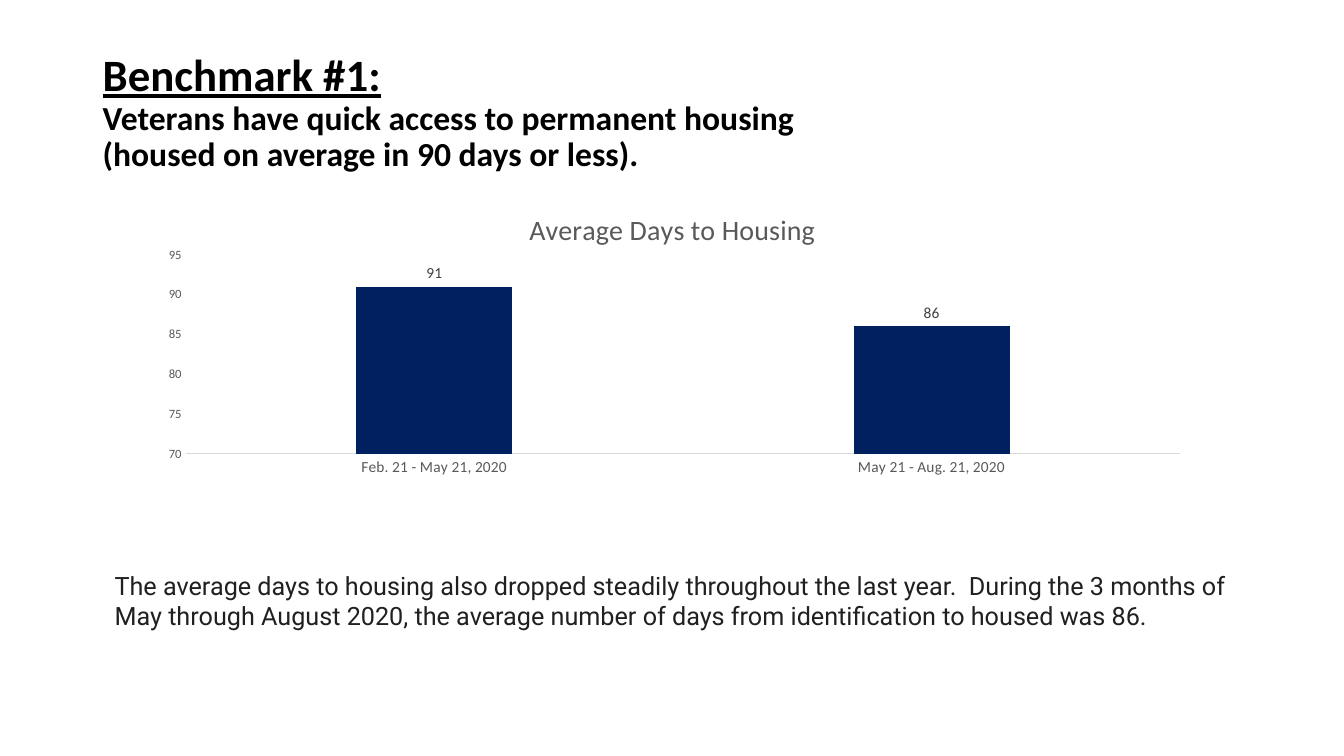
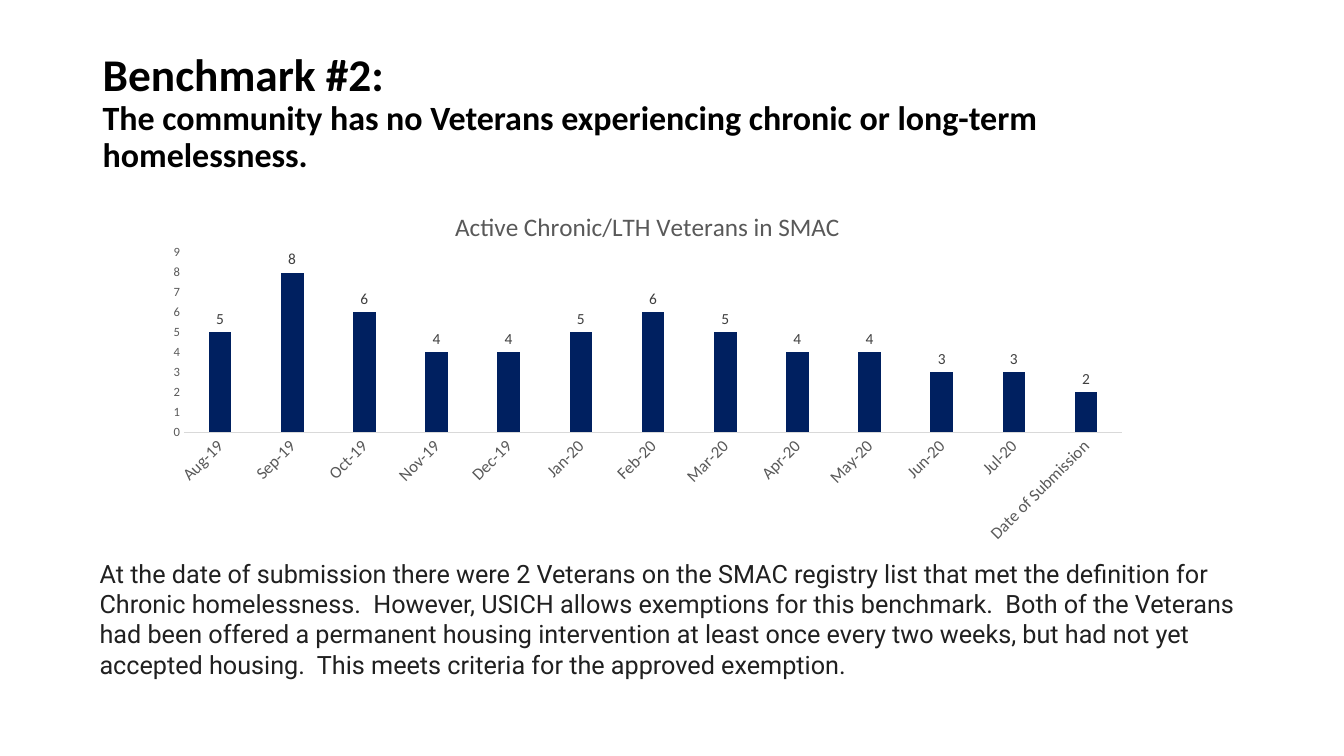
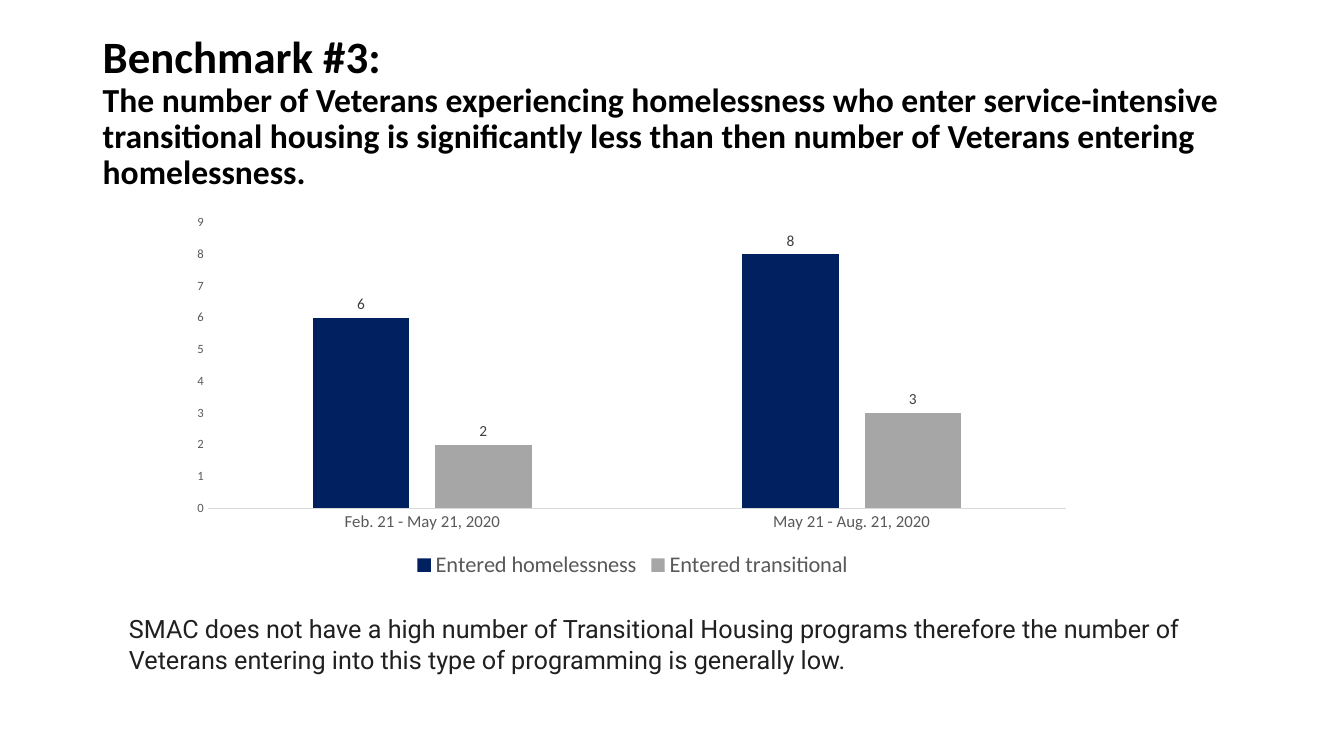
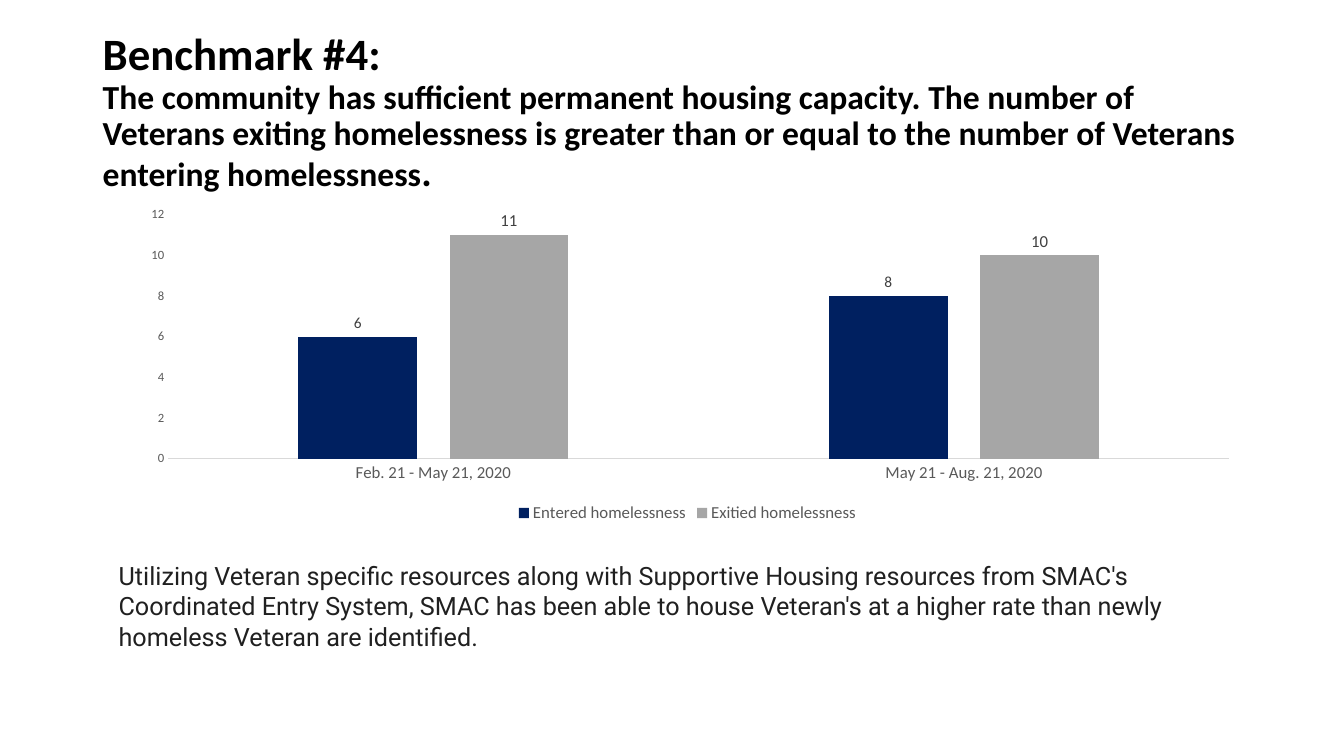
from lxml.etree import SubElement
from pptx import Presentation
from pptx.chart.data import CategoryChartData
from pptx.dml.color import RGBColor
from pptx.enum.chart import (XL_CHART_TYPE, XL_LABEL_POSITION,
                             XL_LEGEND_POSITION, XL_TICK_MARK)
from pptx.enum.text import MSO_ANCHOR
from pptx.oxml.ns import qn
from pptx.util import Cm, Pt

COLORS = {
    "title": "000000",
    "body": "202020",
    "navy": "002060",
    "gray": "A6A6A6",
    "axis_text": "595959",
    "axis_line": "D9D9D9",
    "label": "404040",
}
HEAD_FONT = "Calibri"
BODY_FONT = "Roboto"
TITLE_BOX = (2.34, 1.02, 29.21, 3.68)
QUARTERS = ["Feb. 21 - May 21, 2020", "May 21 - Aug. 21, 2020"]
MONTHS = ["Aug-19", "Sep-19", "Oct-19", "Nov-19", "Dec-19", "Jan-20", "Feb-20",
          "Mar-20", "Apr-20", "May-20", "Jun-20", "Jul-20", "Date of Submission"]


def color(name):
    return RGBColor.from_string(COLORS[name])


def style_font(font, size, color_name, name=HEAD_FONT, bold=False):
    font.size = Pt(size)
    font.name = name
    font.bold = bold
    font.color.rgb = color(color_name)


def add_text_box(slide, box):
    frame = slide.shapes.add_textbox(*map(Cm, box)).text_frame
    frame.word_wrap = True
    return frame


def add_title(slide, heading, lines, sizes=(32, 24), underline=None):
    """Heading above a statement; returns the paragraph."""
    frame = add_text_box(slide, TITLE_BOX)
    frame.vertical_anchor = MSO_ANCHOR.MIDDLE
    paragraph = frame.paragraphs[0]
    paragraph.line_spacing = 0.9
    style_font(paragraph.font, sizes[1], "title", bold=True)
    run = paragraph.add_run()
    run.text = heading
    run.font.size = Pt(sizes[0])
    run.font.underline = underline
    for line in lines:
        paragraph.add_line_break()
        paragraph.add_run().text = line
    return paragraph


def add_body(slide, text, box):
    paragraph = add_text_box(slide, box).paragraphs[0]
    paragraph.text = text
    style_font(paragraph.font, 18, "body", BODY_FONT)


def set_layout(parent, index, **fractions):
    """Place a chart part by fractions of the chart area."""
    old_layout = parent.find(qn("c:layout"))
    if old_layout is not None:
        parent.remove(old_layout)
    layout = SubElement(parent, qn("c:layout"))
    parent.insert(index, layout)
    manual = SubElement(layout, qn("c:manualLayout"))
    if "w" in fractions:
        SubElement(manual, qn("c:layoutTarget")).set("val", "inner")
    for mode in ("xMode", "yMode"):
        SubElement(manual, qn(f"c:{mode}")).set("val", "edge")
    for key, value in fractions.items():
        SubElement(manual, qn(f"c:{key}")).set("val", str(value))


def style_axis(axis, size):
    axis.has_major_gridlines = False
    axis.major_tick_mark = axis.minor_tick_mark = XL_TICK_MARK.NONE
    style_font(axis.tick_labels.font, size, "axis_text")


def add_column_chart(slide, box, categories, series_values, plot_area,
                     category_size=12, label_sizes=(11, 11)):
    data = CategoryChartData()
    data.categories = categories
    for name, values in series_values:
        data.add_series(name, values)
    chart = slide.shapes.add_chart(
        XL_CHART_TYPE.COLUMN_CLUSTERED, *map(Cm, box), data).chart
    style_font(chart.font, 10, "title")
    chart.has_title = False
    chart.has_legend = False

    # Axes
    style_axis(chart.category_axis, category_size)
    axis_line = chart.category_axis.format.line
    axis_line.color.rgb = color("axis_line")
    axis_line.width = Pt(0.75)
    style_axis(chart.value_axis, 9)
    chart.value_axis.format.line.fill.background()

    # Columns and their values
    plot = chart.plots[0]
    plot.vary_by_categories = False
    plot.gap_width = 219
    plot.overlap = -27
    for series, fill, size in zip(plot.series, ("navy", "gray"), label_sizes):
        series.format.fill.solid()
        series.format.fill.fore_color.rgb = color(fill)
        labels = series.data_labels
        labels.show_value = True
        labels.position = XL_LABEL_POSITION.OUTSIDE_END
        style_font(labels.font, size, "label")

    set_layout(chart.element.find(".//" + qn("c:plotArea")), 0,
               **dict(zip("xywh", plot_area)))
    return chart


def add_chart_title(chart, text, size, x, y):
    chart.has_title = True
    paragraph = chart.chart_title.text_frame.paragraphs[0]
    paragraph.text = text
    style_font(paragraph.font, size, "axis_text")
    chart.chart_title.include_in_layout = False
    set_layout(chart.element.find(".//" + qn("c:title")), 1, x=x, y=y)


def add_legend(chart, size):
    chart.has_legend = True
    chart.legend.position = XL_LEGEND_POSITION.BOTTOM
    chart.legend.include_in_layout = False
    style_font(chart.legend.font, size, "axis_text")


def slant_categories(chart):
    body = chart.element.find(f".//{qn('c:catAx')}/{qn('c:txPr')}/{qn('a:bodyPr')}")
    body.set("rot", "-2700000")
    body.set("vert", "horz")


def build_quick_access(slide):
    add_title(slide, "Benchmark #1:",
              ["Veterans have quick access to permanent housing",
               "(housed on average in 90 days or less)."], underline=True)
    chart = add_column_chart(slide, (3.61, 4.7, 26.67, 7.49), QUARTERS,
                             [("Series 1", (91, 86))],
                             (0.04, 0.23, 0.94, 0.67), category_size=11)
    chart.value_axis.minimum_scale = 70
    add_chart_title(chart, "Average Days to Housing", 20, 0.36, 0.06)
    add_body(slide, "The average days to housing also dropped steadily throughout the "
             "last year.  During the 3 months of May through August 2020, the average "
             "number of days from identification to housed was 86.",
             (2.64, 14.25, 29.21, 1.8))


def build_chronic(slide):
    add_title(slide, "Benchmark #2:",
              ["The community has no Veterans experiencing chronic or long-term "
               "homelessness."], sizes=(32.4, 24.3))
    chart = add_column_chart(slide, (3.89, 4.7, 24.89, 9.25), MONTHS,
                             [("Series 1", (5, 8, 6, 4, 4, 5, 6, 5, 4, 4, 3, 3, 2))],
                             (0.03, 0.18, 0.95, 0.49))
    slant_categories(chart)
    add_chart_title(chart, "Active Chronic/LTH Veterans in SMAC", 18, 0.3, 0.05)
    add_body(slide, "At the date of submission there were 2 Veterans on the SMAC registry "
             "list that met the definition for Chronic homelessness.  However, USICH "
             "allows exemptions for this benchmark.  Both of the Veterans had been "
             "offered a permanent housing intervention at least once every two weeks, "
             "but had not yet accepted housing.  This meets criteria for the approved "
             "exemption.", (2.26, 13.94, 29.62, 3.45))


def build_transitional(slide):
    add_title(slide, "Benchmark #3:",
              ["The number of Veterans experiencing homelessness who enter "
               "service-intensive transitional housing is significantly less than then "
               "number of Veterans entering homelessness."])
    chart = add_column_chart(slide, (4.55, 5.23, 22.78, 9.47), QUARTERS,
                             [("Entered homelessness", (6, 8)),
                              ("Entered transitional", (2, 3))],
                             (0.03, 0.04, 0.95, 0.76))
    add_legend(chart, 16)
    add_body(slide, "SMAC does not have a high number of Transitional Housing programs "
             "therefore the number of Veterans entering into this type of programming "
             "is generally low.", (3, 15.34, 28.55, 1.8))


def build_capacity(slide):
    paragraph = add_title(
        slide, "Benchmark #4:",
        ["The community has sufficient permanent housing capacity. The number of "
         "Veterans exiting homelessness is greater than or equal to the number of "
         "Veterans entering homelessness"])
    full_stop = paragraph.add_run()
    full_stop.text = "."
    full_stop.font.size = Pt(28)
    chart = add_column_chart(slide, (3.1, 5.08, 28.45, 8.2), QUARTERS,
                             [("Entered homelessness", (6, 8)),
                              ("Exitied homelessness", (11, 10))],
                             (0.04, 0.04, 0.94, 0.75), label_sizes=(11, 12))
    add_legend(chart, 12)
    add_body(slide, "Utilizing Veteran specific resources along with Supportive Housing "
             "resources from SMAC's Coordinated Entry System, SMAC has been able to "
             "house Veteran's at a higher rate than newly homeless Veteran are "
             "identified.", (2.74, 14, 29.46, 2.57))


def main():
    presentation = Presentation()
    presentation.slide_width = Cm(33.87)
    presentation.slide_height = Cm(19.05)
    blank = presentation.slide_layouts[6]
    for build in (build_quick_access, build_chronic, build_transitional, build_capacity):
        build(presentation.slides.add_slide(blank))
    presentation.save("out.pptx")


if __name__ == "__main__":
    main()
